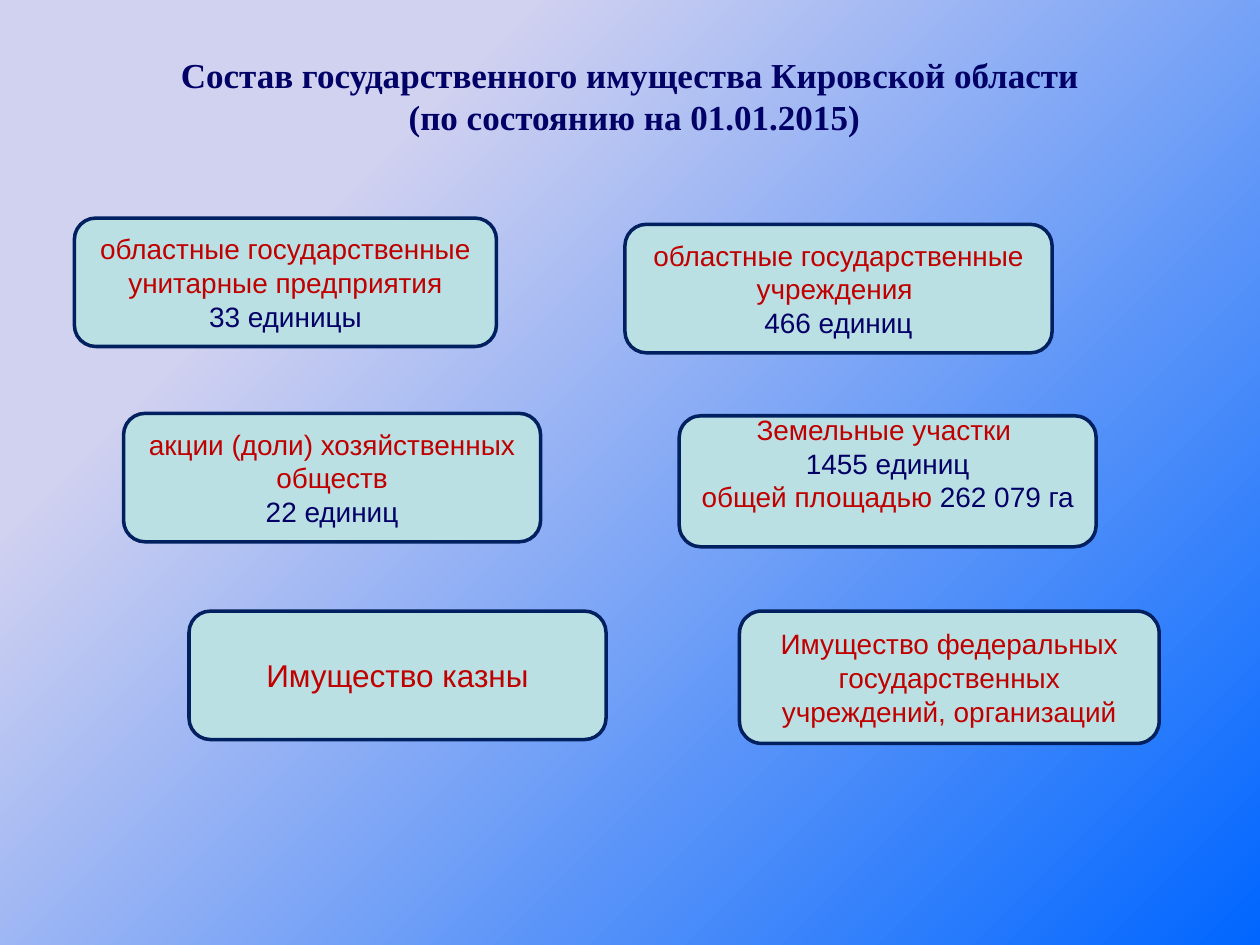
from dataclasses import dataclass

from pptx import Presentation
from pptx.dml.color import RGBColor
from pptx.enum.shapes import MSO_SHAPE as Preset
from pptx.enum.text import MSO_ANCHOR as Anchor, PP_ALIGN as Align
from pptx.util import Pt

COLOURS = {
    "haze": "D1D1F0",
    "azure": "0066FF",
    "fill": "BBE0E3",
    "outline": "002060",
    "label": "C00000",
    "figure": "000066",
}


@dataclass(frozen=True)
class Span:
    text: str
    colour: str = "label"


@dataclass(frozen=True)
class Card:
    left: float
    top: float
    width: float
    height: float
    paras: tuple[tuple[Span, ...], ...]
    size: float = 16
    bottom_inset: float = 3.6


CARDS = (
    Card(42.5, 124.6, 241.2, 73.4, (
        (Span("областные государственные унитарные предприятия"),),
        (Span("33 единицы", "figure"),))),
    Card(357.1, 128.2, 244.1, 73.4, (
        (Span("областные государственные учреждения "),),
        (Span("466 единиц", "figure"),))),
    Card(70.6, 236.2, 238.3, 73.4, (
        (Span("акции (доли) хозяйственных обществ"),),
        (Span("22 единиц", "figure"),))),
    Card(388.1, 237.6, 238.3, 74.9, (
        (Span("Земельные участки "),),
        (Span("1455 единиц", "figure"),),
        (Span("общей площадью "), Span("262 079 га", "figure"))), bottom_inset=24.3),
    Card(108, 349.2, 238.3, 73.4, ((Span("Имущество казны"),),), size=18),
    Card(422.6, 349.2, 239.8, 75.6, (
        (Span("Имущество федеральных государственных учреждений, организаций"),),)),
)


def rgb(name: str) -> RGBColor:
    """Return the named colour."""
    return RGBColor.from_string(COLOURS[name])


def apply(target, formats: dict) -> None:
    """Set each attribute in formats on target."""
    for name, value in formats.items():
        setattr(target, name, value)


def write(frame, paras, font: dict, bottom_inset: float = 3.6) -> None:
    """Fill a frame with centred paragraphs of coloured spans."""
    apply(frame, {"word_wrap": True, "vertical_anchor": Anchor.MIDDLE,
                  "margin_bottom": Pt(bottom_inset)})
    for index, spans in enumerate(paras):
        para = frame.add_paragraph() if index else frame.paragraphs[0]
        para.alignment = Align.CENTER
        for span in spans:
            for number, line in enumerate(span.text.split("\n")):
                if number:
                    para.add_line_break()
                run = para.add_run()
                run.text = line
                apply(run.font, font)
                run.font.color.rgb = rgb(span.colour)


def paint_background(page) -> None:
    """Lay the diagonal gradient behind the page."""
    fill = page.background.fill
    fill.gradient()
    fill.gradient_angle = 315
    stops = ((0.24, "haze"), (1, "azure"))
    for stop, (position, name) in zip(fill.gradient_stops, stops):
        stop.position = position
        stop.color.rgb = rgb(name)


def draw_title(page) -> None:
    """Add the heading."""
    box = page.shapes.add_textbox(Pt(36), Pt(31.7), Pt(648), Pt(45.4))
    heading = Span("Состав государственного имущества Кировской области\n"
                   " (по состоянию на 01.01.2015)", "figure")
    write(box.text_frame, ((heading,),),
          {"name": "Times New Roman", "size": Pt(20), "bold": True})


def draw_card(page, card: Card) -> None:
    """Add one rounded card with its text."""
    box = page.shapes.add_shape(Preset.FLOWCHART_ALTERNATE_PROCESS, Pt(card.left),
                                Pt(card.top), Pt(card.width), Pt(card.height))
    box.shadow.inherit = False
    box.fill.solid()
    box.fill.fore_color.rgb = rgb("fill")
    box.line.color.rgb = rgb("outline")
    box.line.width = Pt(2)
    write(box.text_frame, card.paras, {"name": "Arial", "size": Pt(card.size)},
          card.bottom_inset)


def main() -> None:
    """Build and save the deck."""
    deck = Presentation()
    apply(deck, {"slide_width": Pt(720), "slide_height": Pt(540)})
    page = deck.slides.add_slide(deck.slide_layouts[6])
    paint_background(page)
    draw_title(page)
    for card in CARDS:
        draw_card(page, card)
    deck.save("out.pptx")


if __name__ == "__main__":
    main()
